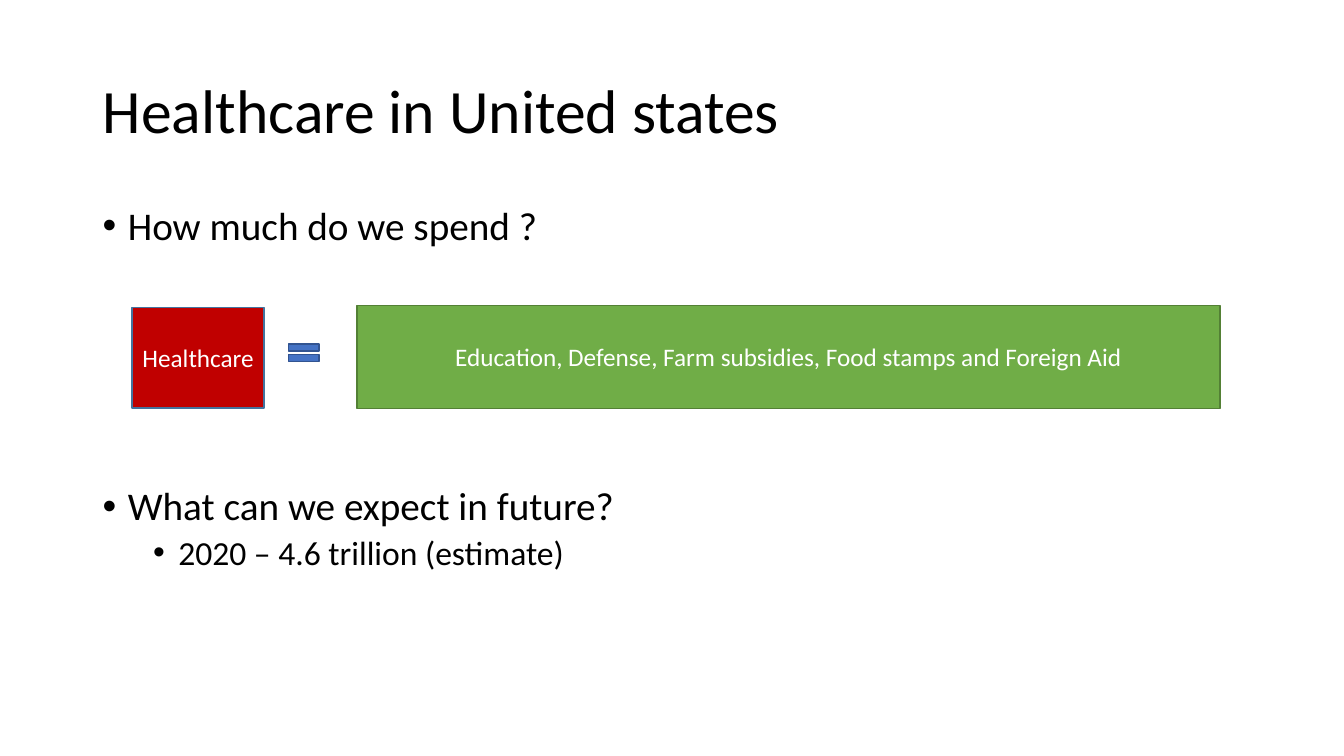
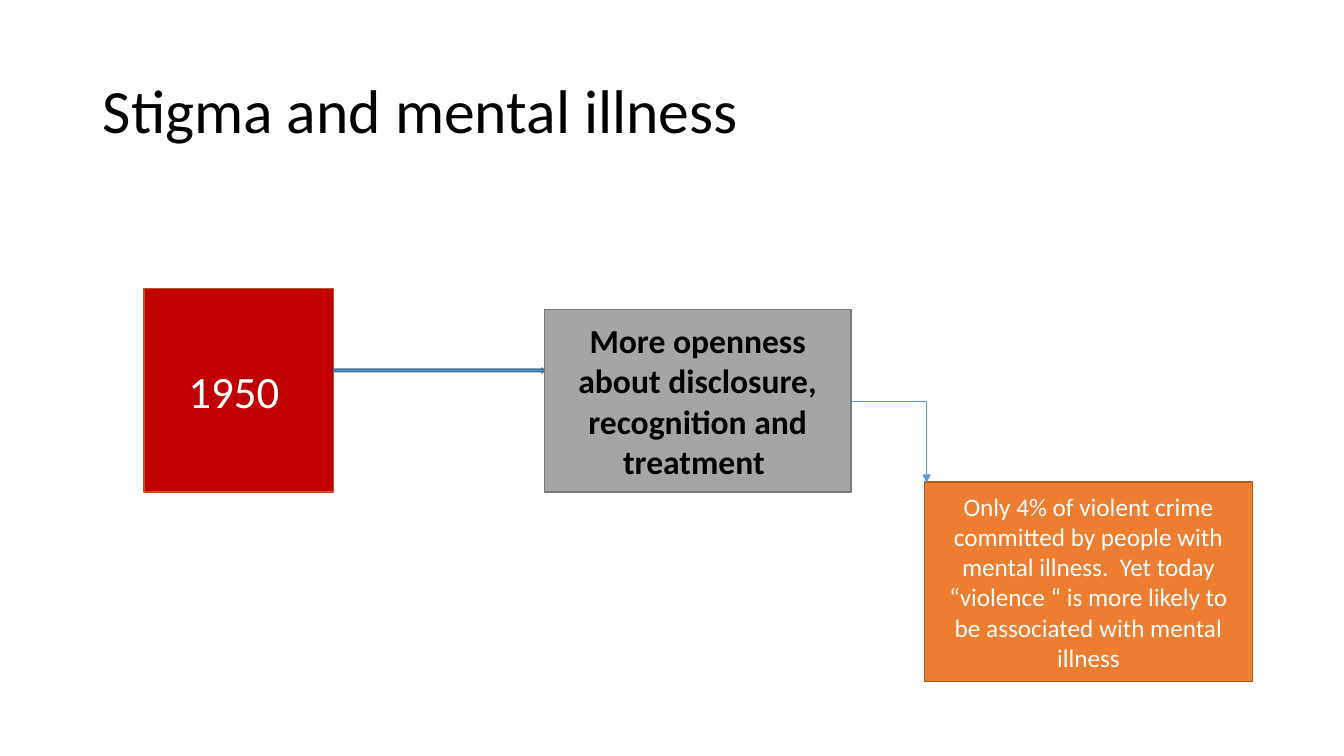
"""Build two slides on healthcare spending and the stigma of mental illness."""
from dataclasses import dataclass

from lxml.etree import SubElement
from pptx import Presentation
from pptx.dml.color import RGBColor
from pptx.enum.shapes import MSO_CONNECTOR, MSO_SHAPE
from pptx.enum.text import MSO_ANCHOR, MSO_AUTO_SIZE, PP_ALIGN
from pptx.oxml.ns import qn
from pptx.util import Inches, Pt


@dataclass(frozen=True)
class Theme:
    font: str = "Calibri"
    black: str = "000000"
    white: str = "FFFFFF"
    red: str = "C00000"
    green: str = "70AD47"
    green_edge: str = "538035"
    blue: str = "4472C4"
    blue_edge: str = "325491"
    sky: str = "5B9BD5"
    sky_edge: str = "43739E"
    orange: str = "ED7D31"
    orange_edge: str = "AF5C24"
    grey: str = "A5A5A5"
    grey_edge: str = "7A7A7A"
    title_size: int = 44
    bullet_size: int = 28
    sub_bullet_size: int = 24
    year_size: int = 32
    emphasis_size: int = 24
    label_size: int = 18
    edge_width: float = 1
    connector_width: float = 0.5
    line_spacing: float = 0.9


theme = Theme()


def style_text(paragraph, size, color, bold=False):
    paragraph.font.name = theme.font
    paragraph.font.size = Pt(size)
    paragraph.font.bold = bold
    paragraph.font.color.rgb = RGBColor.from_string(color)


def add_block(slide, kind, box, fill, edge, text="", size=theme.label_size,
              color=theme.white, bold=False):
    shape = slide.shapes.add_shape(kind, *[Inches(value) for value in box])
    shape.shadow.inherit = False
    shape.fill.solid()
    shape.fill.fore_color.rgb = RGBColor.from_string(fill)
    shape.line.color.rgb = RGBColor.from_string(edge)
    shape.line.width = Pt(theme.edge_width)
    if text:
        shape.text_frame.word_wrap = True
        shape.text_frame.vertical_anchor = MSO_ANCHOR.MIDDLE
        paragraph = shape.text_frame.paragraphs[0]
        paragraph.text = text
        paragraph.alignment = PP_ALIGN.CENTER
        style_text(paragraph, size, color, bold)


presentation = Presentation()
presentation.slide_width = Inches(13.33)
presentation.slide_height = Inches(7.5)

slides = []
for heading in ("Healthcare in United states", "Stigma and mental illness"):
    slide = presentation.slides.add_slide(presentation.slide_layouts[5])
    title = slide.shapes.title
    title.left, title.top = Inches(0.92), Inches(0.4)
    title.width, title.height = Inches(11.5), Inches(1.45)
    title.text_frame.text = heading
    title.text_frame.auto_size = MSO_AUTO_SIZE.NONE
    title.text_frame.vertical_anchor = MSO_ANCHOR.MIDDLE
    paragraph = title.text_frame.paragraphs[0]
    paragraph.alignment = PP_ALIGN.LEFT
    paragraph.line_spacing = theme.line_spacing
    style_text(paragraph, theme.title_size, theme.black)
    slides.append(slide)
spending_slide, stigma_slide = slides

questions = spending_slide.shapes.add_textbox(
    Inches(0.92), Inches(2), Inches(11.5), Inches(4.76))
questions.text_frame.word_wrap = True
bullets = [
    ("How much do we spend ?", 0, theme.bullet_size, 10),
    ("What can we expect in future?", 0, theme.bullet_size, 170),
    ("2020 – 4.6 trillion (estimate)", 1, theme.sub_bullet_size, 5),
]
for index, (text, level, size, space_before) in enumerate(bullets):
    frame = questions.text_frame
    paragraph = frame.add_paragraph() if index else frame.paragraphs[0]
    paragraph.text = text
    paragraph.level = level
    properties = paragraph._p.get_or_add_pPr()
    properties.set("marL", str(Inches(0.25 + 0.5 * level)))
    properties.set("indent", str(Inches(-0.25)))
    SubElement(properties, qn("a:buFont")).set("typeface", "Arial")
    SubElement(properties, qn("a:buChar")).set("char", "•")
    paragraph.line_spacing = theme.line_spacing
    paragraph.space_before = Pt(space_before)
    style_text(paragraph, size, theme.black)

add_block(spending_slide, MSO_SHAPE.RECTANGLE, (1.31, 3.05, 1.31, 1),
          theme.red, theme.sky_edge, "Healthcare")
add_block(spending_slide, MSO_SHAPE.RECTANGLE, (3.54, 3.03, 8.56, 1.02),
          theme.green, theme.green_edge,
          "Education, Defense, Farm subsidies, Food stamps and Foreign Aid")
add_block(spending_slide, MSO_SHAPE.MATH_EQUAL, (2.81, 3.35, 0.41, 0.3),
          theme.blue, theme.blue_edge)

add_block(stigma_slide, MSO_SHAPE.RECTANGLE, (1.43, 2.86, 1.88, 2.02),
          theme.red, theme.orange_edge, "1950 ", theme.year_size)
add_block(stigma_slide, MSO_SHAPE.RECTANGLE, (5.4, 3.07, 3.04, 1.81),
          theme.grey, theme.grey_edge,
          "More openness about disclosure, recognition and treatment ",
          theme.emphasis_size, theme.black, bold=True)
add_block(stigma_slide, MSO_SHAPE.RECTANGLE, (9.17, 4.78, 3.25, 1.98),
          theme.orange, theme.orange_edge,
          "Only 4% of violent crime committed by people with mental illness.  "
          "Yet today “violence “ is more likely to be associated with mental illness")
add_block(stigma_slide, MSO_SHAPE.RIGHT_ARROW, (3.31, 3.65, 2.09, 0.05),
          theme.sky, theme.sky_edge)

connector = stigma_slide.shapes.add_connector(
    MSO_CONNECTOR.ELBOW, Inches(8.44), Inches(3.98), Inches(9.19), Inches(4.79))
connector.line.color.rgb = RGBColor.from_string(theme.sky)
connector.line.width = Pt(theme.connector_width)
connector_properties = connector._element.spPr
connector_properties.find(qn("a:prstGeom")).set("prst", "bentConnector2")
SubElement(connector_properties.find(qn("a:ln")), qn("a:tailEnd")).set("type", "triangle")
SubElement(connector_properties, qn("a:effectLst"))

presentation.save("out.pptx")
